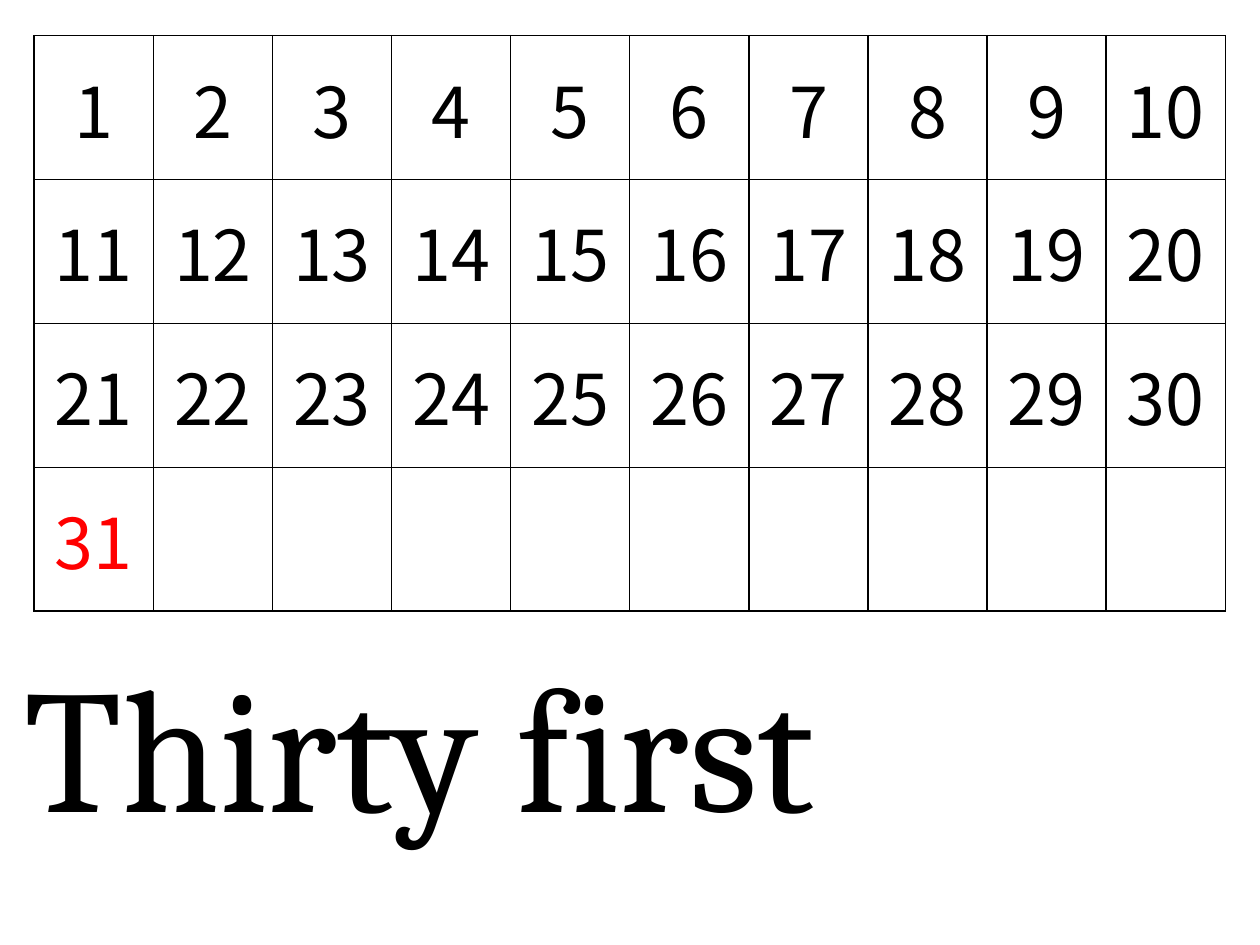
from dataclasses import dataclass

from lxml import etree
from pptx import Presentation
from pptx.dml.color import RGBColor
from pptx.enum.text import MSO_ANCHOR, MSO_AUTO_SIZE, PP_ALIGN
from pptx.oxml.ns import qn
from pptx.util import Cm, Pt

CENTER = PP_ALIGN.CENTER
MIDDLE = MSO_ANCHOR.MIDDLE
FIT_SHAPE = MSO_AUTO_SIZE.SHAPE_TO_FIT_TEXT
BLANK_LAYOUT = 6
BORDER_TAGS = ("a:lnL", "a:lnR", "a:lnT", "a:lnB")


@dataclass(frozen=True)
class Theme:
    ink: str = "000000"
    highlight: str = "FF0000"
    day_font: str = "Noto Sans CJK JP"
    caption_font: str = "Cambria"
    day_size: int = 40
    caption_size: int = 100
    border_width: int = 1


@dataclass(frozen=True)
class Area:
    left: float
    top: float
    width: float
    height: float

    def lengths(self):
        return Cm(self.left), Cm(self.top), Cm(self.width), Cm(self.height)


@dataclass(frozen=True)
class Calendar:
    area: Area
    rows: int
    columns: int
    days: int
    chosen_day: int


THEME = Theme()
CALENDAR = Calendar(Area(0.69, 0.72, 24.01, 11.6), rows=4, columns=10, days=31, chosen_day=31)
CAPTION_AREA = Area(0.25, 12.73, 18.97, 4.52)


def write_text(para, text: str, font: str, size: int, color: str) -> None:
    para.text = text
    para.font.name = font
    para.font.size = Pt(size)
    para.font.color.rgb = RGBColor.from_string(color)


def draw_borders(cell) -> None:
    properties = cell._tc.get_or_add_tcPr()
    for tag in BORDER_TAGS:
        line = etree.SubElement(properties, qn(tag), w=str(Pt(THEME.border_width)))
        fill = etree.SubElement(line, qn("a:solidFill"))
        etree.SubElement(fill, qn("a:srgbClr"), val=THEME.ink)


def draw_calendar(page, calendar: Calendar) -> None:
    frame = page.shapes.add_table(calendar.rows, calendar.columns, *calendar.area.lengths())
    table = frame.table
    table.first_row = False
    table.horz_banding = False

    for day, cell in enumerate(table.iter_cells(), start=1):
        draw_borders(cell)
        cell.fill.background()
        cell.vertical_anchor = MIDDLE
        if day <= calendar.days:
            para = cell.text_frame.paragraphs[0]
            para.alignment = CENTER
            color = THEME.highlight if day == calendar.chosen_day else THEME.ink
            write_text(para, str(day), THEME.day_font, THEME.day_size, color)


def draw_caption(page, text: str, area: Area) -> None:
    box = page.shapes.add_textbox(*area.lengths())
    box.text_frame.word_wrap = False
    box.text_frame.auto_size = FIT_SHAPE
    write_text(box.text_frame.paragraphs[0], text, THEME.caption_font,
               THEME.caption_size, THEME.ink)


def main() -> None:
    deck = Presentation()
    deck.slide_width, deck.slide_height = Cm(25.4), Cm(19.05)
    page = deck.slides.add_slide(deck.slide_layouts[BLANK_LAYOUT])

    # Days of the month, with the chosen day highlighted
    draw_calendar(page, CALENDAR)

    # The chosen day in words
    draw_caption(page, "Thirty first", CAPTION_AREA)

    deck.save("out.pptx")


if __name__ == "__main__":
    main()
